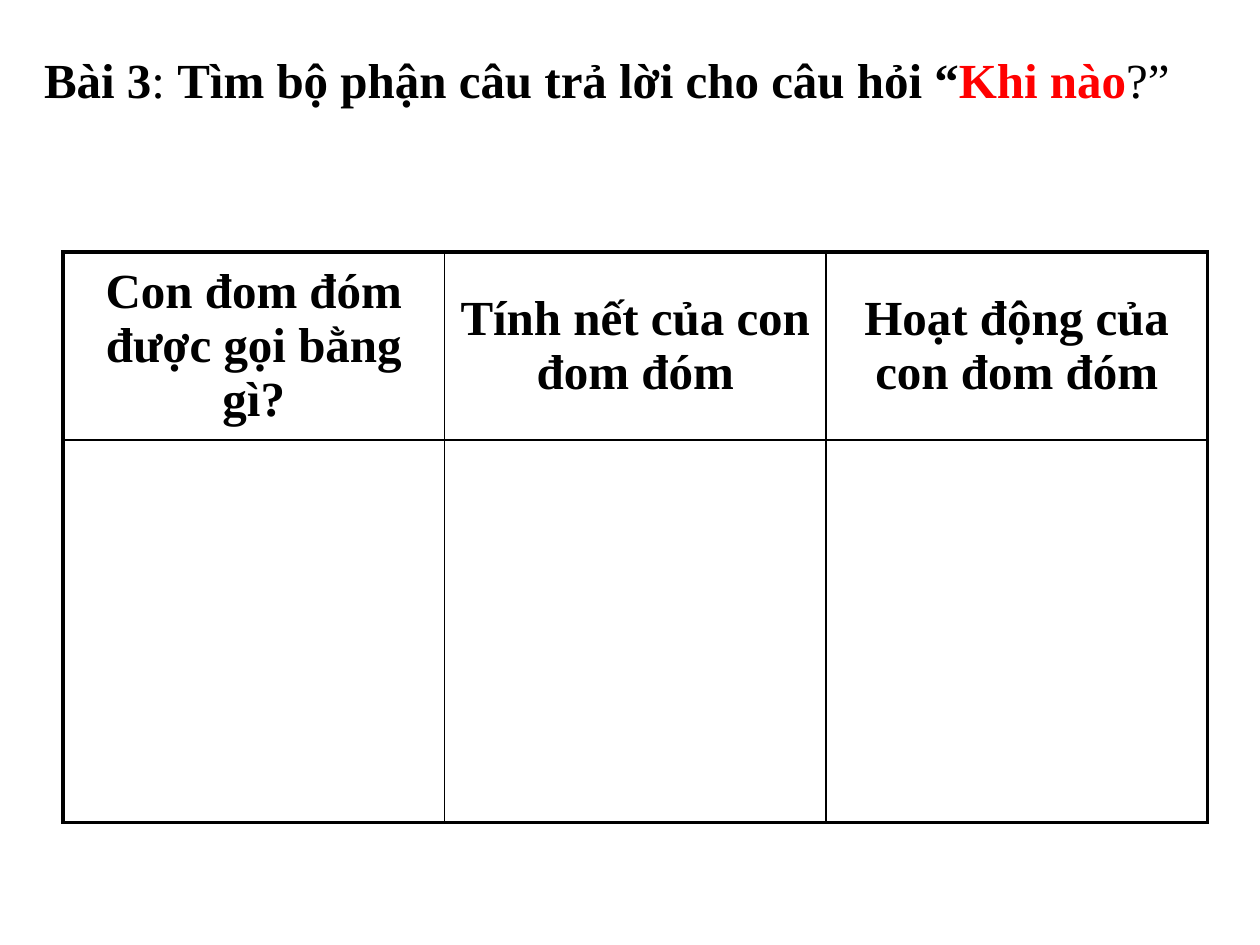
import pptx
import pptx.dml.color
import pptx.enum.text
import pptx.oxml
import pptx.oxml.ns
import pptx.util

Pt = pptx.util.Pt
Align = pptx.enum.text.PP_ALIGN
Anchor = pptx.enum.text.MSO_ANCHOR
COLORS = {"text": "000000", "highlight": "FF0000"}


def format_run(run, color="text", bold=True):
    run.font.name = "Times New Roman"
    run.font.size = Pt(28)
    run.font.bold = bold
    run.font.color.rgb = pptx.dml.color.RGBColor.from_string(COLORS[color])


def add_border(cell, side, width):
    cell._tc.get_or_add_tcPr().append(pptx.oxml.parse_xml(
        f'<a:{side} {pptx.oxml.ns.nsdecls("a")} w="{Pt(width)}"><a:solidFill>'
        f'<a:srgbClr val="{COLORS["text"]}"/></a:solidFill></a:{side}>'))


presentation = pptx.Presentation()
presentation.slide_width, presentation.slide_height = Pt(720), Pt(540)
slide = presentation.slides.add_slide(presentation.slide_layouts[5])

# Title with the question word highlighted
title = slide.shapes.title
title.left, title.top, title.width, title.height = Pt(18), Pt(24.5), Pt(672), Pt(41)
title.text_frame.word_wrap = True
title.text_frame.auto_size = pptx.enum.text.MSO_AUTO_SIZE.NONE
title.text_frame.vertical_anchor = Anchor.BOTTOM
paragraph = title.text_frame.paragraphs[0]
paragraph.alignment = Align.LEFT
for text, color, bold in [
    ("Bài 3", "text", True),
    (": ", "text", False),
    ("Tìm bộ phận câu trả lời cho câu hỏi “", "text", True),
    ("Khi nào", "highlight", True),
    ("?”", "text", False),
]:
    run = paragraph.add_run()
    run.text = text
    format_run(run, color, bold)

# Table: one header row over empty answer cells
headers = ["Con đom đóm được gọi bằng gì?", "Tính nết của con đom đóm",
           "Hoạt động của con đom đóm"]
row_heights = [107.5, 218.5]
table = slide.shapes.add_table(len(row_heights), len(headers), Pt(36), Pt(144),
                               Pt(654), Pt(sum(row_heights))).table
table.first_row = table.horz_banding = False
for row, height in zip(table.rows, row_heights):
    row.height = Pt(height)
for column, header in enumerate(headers):
    table.columns[column].width = Pt(218)
    cell = table.cell(0, column)
    cell.text = header
    cell.vertical_anchor = Anchor.MIDDLE
    paragraph = cell.text_frame.paragraphs[0]
    paragraph.alignment = Align.CENTER
    format_run(paragraph.runs[0])

# Thick outer frame, thin inner lines
last_row, last_column = len(row_heights) - 1, len(headers) - 1
for row in range(last_row + 1):
    for column in range(last_column + 1):
        cell = table.cell(row, column)
        outer_sides = {"lnL": column == 0, "lnR": column == last_column,
                       "lnT": row == 0, "lnB": row == last_row}
        for side, is_outer in outer_sides.items():
            add_border(cell, side, 2.25 if is_outer else 1)
        cell.fill.background()

presentation.save("out.pptx")
